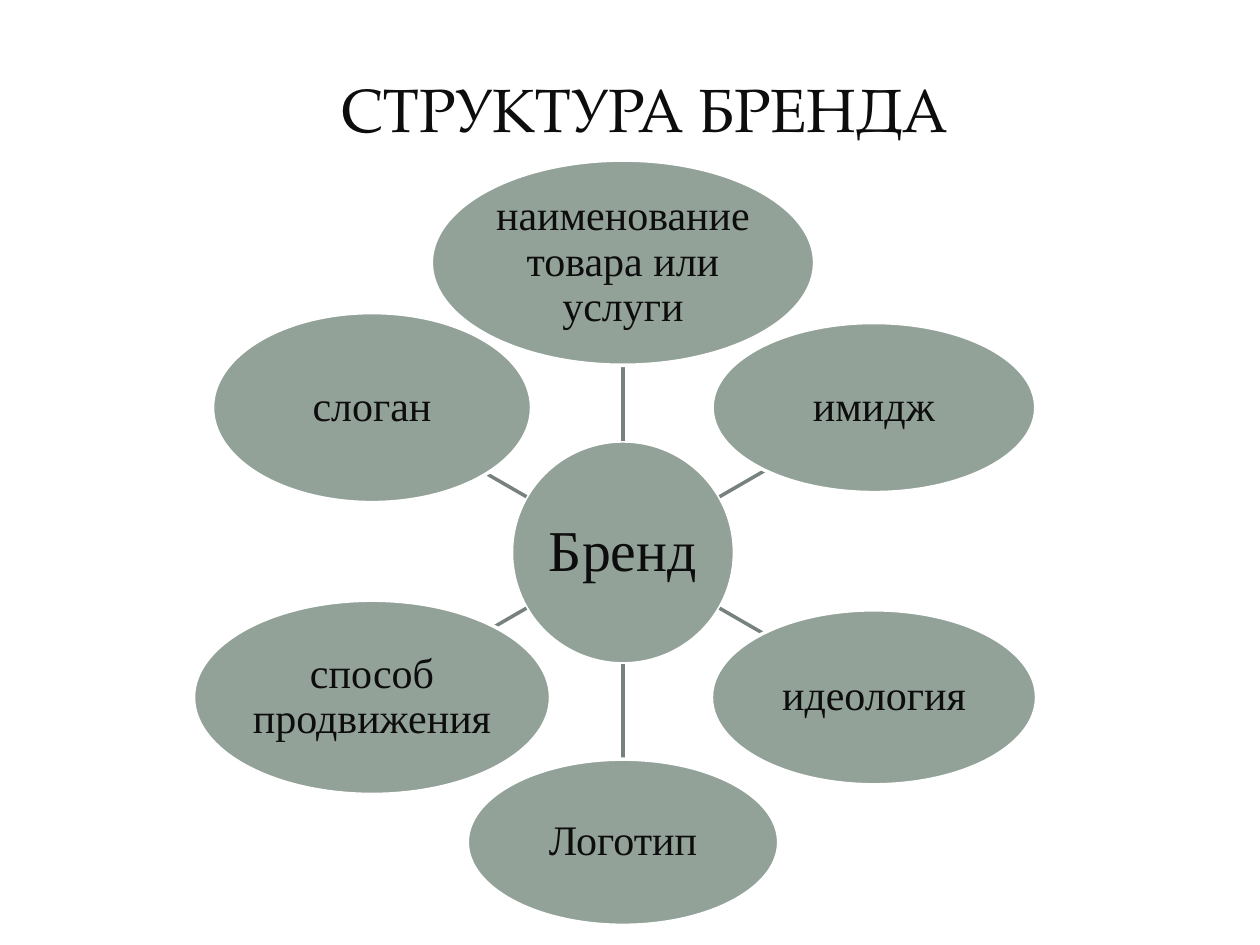
from math import cos, sin, hypot, radians
from lxml import etree
from pptx import Presentation
from pptx import util as u
from pptx.dml import color
from pptx.enum import shapes, text
from pptx.oxml import ns

COLORS = {"sage": "93A299", "spoke": "76827B", "ink": "0D0D0D", "edge": "FFFFFF"}
HUB = (356, 315.7)
HUB_SIZE = 127.4
ORBIT = 165.6
LEAVES = [
    ("наименование товара или услуги", 219, 117.2),
    ("имидж", 185, 97.2),
    ("идеология", 185.8, 100),
    ("Логотип", 178, 95),
    ("способ продвижения", 204, 111),
    ("слоган", 182.3, 108.6),
]


def rgb(name):
    return color.RGBColor.from_string(COLORS[name])


def write(shape, words, size, font="Times New Roman", ink="ink", inset=None,
          space=None, anchor=text.MSO_ANCHOR.TOP):
    frame = shape.text_frame
    frame.word_wrap = True
    frame.vertical_anchor = anchor
    if inset is not None:
        frame.margin_left = frame.margin_right = u.Pt(inset)
        frame.margin_top = frame.margin_bottom = u.Pt(inset)
    para = frame.paragraphs[0]
    para.alignment = text.PP_ALIGN.CENTER
    para.line_spacing = space
    run = para.add_run()
    run.text = words
    run.font.size = u.Pt(size)
    run.font.name = font
    run.font.color.rgb = rgb(ink)


def add_title(slide, words):
    box = slide.shapes.add_textbox(u.Pt(102), u.Pt(37.4), u.Pt(532.8), u.Pt(49.7))
    write(box, words, 35, font="TeX Gyre Pagella")


def add_oval(slide, words, mid, wide, high, size):
    oval = slide.shapes.add_shape(
        shapes.MSO_SHAPE.OVAL, u.Pt(mid[0] - wide / 2), u.Pt(mid[1] - high / 2),
        u.Pt(wide), u.Pt(high))
    oval.shadow.inherit = False
    oval.fill.solid()
    oval.fill.fore_color.rgb = rgb("sage")
    oval.line.color.rgb = rgb("edge")
    oval.line.width = u.Pt(2)
    write(oval, words, size, inset=1.5, space=0.9, anchor=text.MSO_ANCHOR.MIDDLE)


def around(angle, reach):
    return HUB[0] + reach * cos(angle), HUB[1] + reach * sin(angle)


def add_spoke(slide, start, end):
    line = slide.shapes.add_connector(
        shapes.MSO_CONNECTOR.STRAIGHT, *(u.Pt(v) for v in (*start, *end)))
    line.line.color.rgb = rgb("spoke")
    line.line.width = u.Pt(2)
    etree.SubElement(line.element.spPr, ns.qn("a:effectLst"))


def add_leaf(slide, angle, words, wide, high):
    a, b = wide / 2, high / 2
    rim = a * b / hypot(b * cos(angle), a * sin(angle))
    add_spoke(slide, around(angle, HUB_SIZE / 2), around(angle, ORBIT - rim))
    add_oval(slide, words, around(angle, ORBIT), wide, high, 24)


def main():
    deck = Presentation()
    deck.slide_width, deck.slide_height = u.Pt(720), u.Pt(540)
    slide = deck.slides.add_slide(deck.slide_layouts[6])
    add_title(slide, "СТРУКТУРА БРЕНДА")
    add_oval(slide, "Бренд", HUB, HUB_SIZE, HUB_SIZE, 33)
    for i, leaf in enumerate(LEAVES):
        add_leaf(slide, radians(i * 360 / len(LEAVES) - 90), *leaf)
    deck.save("out.pptx")


if __name__ == "__main__":
    main()
